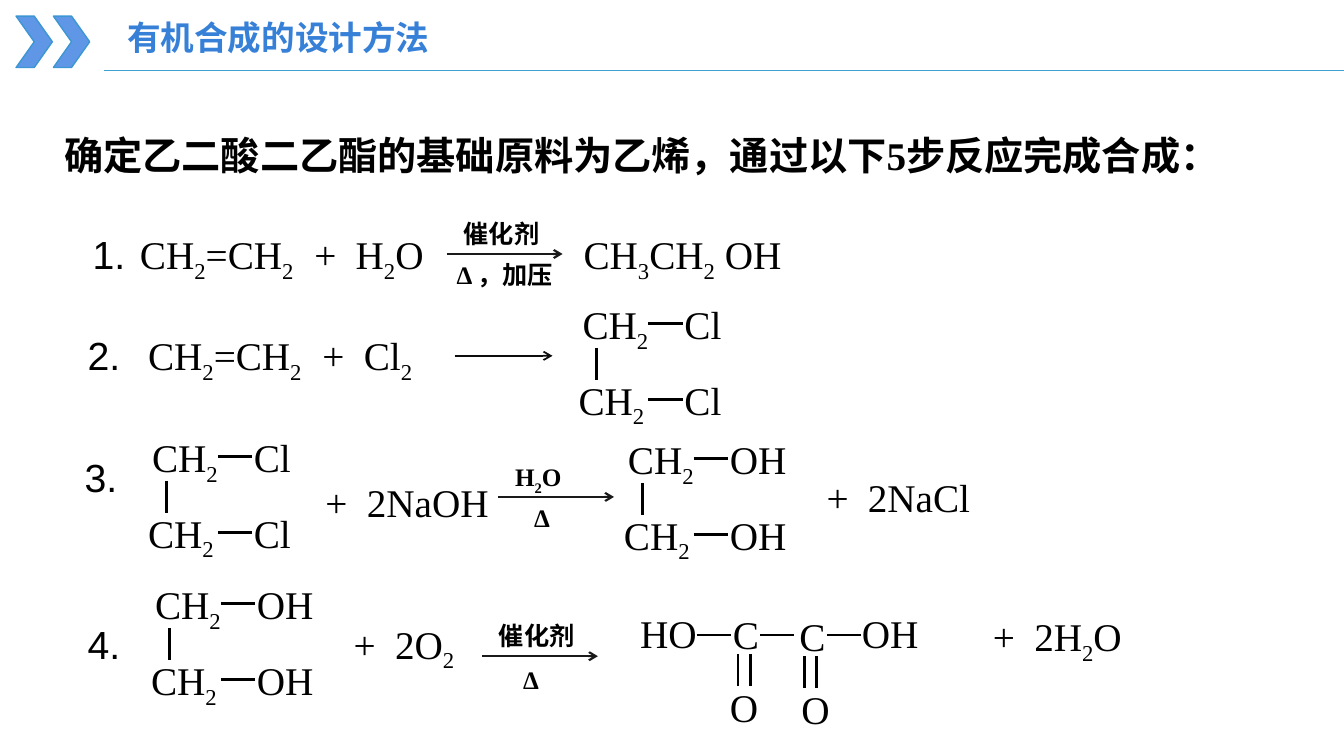
from lxml import etree
from pptx import Presentation
from pptx.dml.color import RGBColor
from pptx.enum.shapes import MSO_CONNECTOR, MSO_SHAPE
from pptx.enum.text import MSO_ANCHOR, MSO_AUTO_SIZE, PP_ALIGN
from pptx.oxml.ns import qn
from pptx.util import Inches, Pt

SERIF = "Times New Roman"
SANS = "Arial"
CHINESE = "Noto Sans CJK SC"


def rgb(value):
    return RGBColor.from_string(value)


def add_run(paragraph, words, font, size, color="000000", bold=False, subscript=False):
    run = paragraph.add_run()
    run.text = words
    run.font.name = font
    run.font.size = Pt(size)
    run.font.bold = bold
    run.font.color.rgb = rgb(color)
    properties = run.font._element
    east_asian = etree.Element(qn("a:ea"), typeface=CHINESE)
    properties.find(qn("a:latin")).addnext(east_asian)
    if subscript:
        properties.set("baseline", "-25000")


def add_formula(paragraph, formula, font, size, bold):
    first, *rest = formula.split("_")
    add_run(paragraph, first, font, size, bold=bold)
    for part in rest:
        add_run(paragraph, part[0], font, size, bold=bold, subscript=True)
        if part[1:]:
            add_run(paragraph, part[1:], font, size, bold=bold)


def add_text(slide, x, y, width, *parts, size=28, bold=False):
    height = 0.57 if size == 28 else 0.4
    box = slide.shapes.add_textbox(Inches(x), Inches(y), Inches(width), Inches(height))
    box.text_frame.word_wrap = True
    for formula, font in parts:
        add_formula(box.text_frame.paragraphs[0], formula, font, size, bold)


def add_symbol(slide, x, y, formula, width=1.0):
    add_text(slide, x, y, width, (formula, SERIF))


def add_number(slide, x, y, number):
    add_text(slide, x, y, 0.67, (f"{number}.", SANS))


def add_plus_term(slide, x, y, formula):
    add_symbol(slide, x, y, "+", 0.5)
    add_symbol(slide, x + 0.41, y, formula, 1.6)


def add_line(slide, start, end, color="000000", weight=2, arrow=False):
    line = slide.shapes.add_connector(
        MSO_CONNECTOR.STRAIGHT, *(Inches(value) for value in (*start, *end)))
    line.line.color.rgb = rgb(color)
    line.line.width = Pt(weight)
    if arrow:
        etree.SubElement(line.line._get_or_add_ln(), qn("a:tailEnd"), type="arrow")
    etree.SubElement(line._element.spPr, qn("a:effectLst"))


def add_bond(slide, x, y):
    add_line(slide, (x, y), (x + 0.34, y))


def add_vertical_bond(slide, x, y):
    add_line(slide, (x, y), (x, y + 0.32))


def add_condition(slide, x, y, *parts):
    add_text(slide, x, y, 1.49, *parts, size=18, bold=True)


def add_reaction_arrow(slide, x, y, above, below, below_x, below_y):
    add_line(slide, (x, y), (x + 1.15, y), "1A1A1A", 1.5, arrow=True)
    add_condition(slide, x + 0.07, y - 0.4, above)
    add_condition(slide, below_x, below_y, *below)


def add_substituted_ethane(slide, x, y, group):
    add_vertical_bond(slide, x + 0.24, y + 0.52)
    for carbon_x, row_y, bond_y in ((x, y, 0.28), (x - 0.04, y + 0.75, 0.28)):
        add_symbol(slide, carbon_x, row_y, "CH_2")
        add_bond(slide, x + 0.75, row_y + bond_y)
        add_symbol(slide, x + 1.01, row_y, group)


def add_carbonyl(slide, x, y, oxygen_x):
    add_symbol(slide, x, y, "C")
    for bond_x in (x + 0.15, x + 0.27):
        add_vertical_bond(slide, bond_x, y + 0.48)
    add_symbol(slide, oxygen_x, y + 0.72, "O")


def add_header(slide):
    for x in (0.16, 0.53):
        chevron = slide.shapes.add_shape(
            MSO_SHAPE.CHEVRON, Inches(x), Inches(0.16), Inches(0.36), Inches(0.51))
        chevron.shadow.inherit = False
        chevron.fill.solid()
        chevron.fill.fore_color.rgb = rgb("6096E6")
        chevron.line.color.rgb = rgb("3B96D3")
        chevron.line.width = Pt(1)
    add_line(slide, (1.03, 0.7), (13.33, 0.7), "3DA1D2", 0.5)

    title = slide.shapes.title
    title.left, title.top = Inches(1.16), Inches(0.12)
    title.width, title.height = Inches(4.19), Inches(0.5)
    frame = title.text_frame
    frame.auto_size = MSO_AUTO_SIZE.NONE
    frame.vertical_anchor = MSO_ANCHOR.TOP
    heading = frame.paragraphs[0]
    heading.alignment = PP_ALIGN.LEFT
    add_run(heading, "有机合成的设计方法", CHINESE, 24, "3780D7", bold=True)


def add_hydration(slide):
    add_number(slide, 0.82, 2.24, 1)
    add_symbol(slide, 1.29, 2.24, "CH_2=CH_2", 2)
    add_plus_term(slide, 3.02, 2.24, "H_2O")
    add_reaction_arrow(slide, 4.43, 2.52, ("催化剂", SANS),
                       [("Δ ", SERIF), ("，加压", SANS)], 4.43, 2.52)
    add_symbol(slide, 5.69, 2.24, "CH_3CH_2 OH", 3.14)


def add_chlorination(slide):
    add_number(slide, 0.77, 3.24, 2)
    add_symbol(slide, 1.37, 3.24, "CH_2=CH_2", 2)
    add_plus_term(slide, 3.1, 3.24, "Cl_2")
    add_line(slide, (4.51, 3.53), (5.48, 3.53), "0D0D0D", 1.25, arrow=True)
    add_substituted_ethane(slide, 5.68, 2.93, "Cl")


def add_hydrolysis(slide):
    add_number(slide, 0.74, 4.45, 3)
    add_substituted_ethane(slide, 1.41, 4.25, "Cl")
    add_plus_term(slide, 3.13, 4.7, "2NaOH")
    add_reaction_arrow(slide, 4.94, 4.93, ("H_2O", SERIF), [("Δ", SERIF)], 5.2, 4.93)
    add_substituted_ethane(slide, 6.13, 4.27, "OH")
    add_plus_term(slide, 8.1, 4.65, "2NaCl")


def add_oxidation(slide):
    add_number(slide, 0.77, 6.1, 4)
    add_substituted_ethane(slide, 1.44, 5.71, "OH")
    add_plus_term(slide, 3.41, 6.1, "2O_2")
    add_reaction_arrow(slide, 4.78, 6.51, ("催化剂", SANS), [("Δ", SERIF)], 5.09, 6.54)
    add_symbol(slide, 6.25, 6, "HO")
    add_carbonyl(slide, 7.17, 6.01, 7.14)
    add_carbonyl(slide, 7.83, 6.03, 7.85)
    add_symbol(slide, 8.45, 6, "OH")
    for x in (6.91, 7.54, 8.2):
        add_bond(slide, x, 6.3)
    add_plus_term(slide, 9.75, 6.03, "2H_2O")


def main():
    presentation = Presentation()
    presentation.slide_width = Inches(13.33)
    presentation.slide_height = Inches(7.5)
    slide = presentation.slides.add_slide(presentation.slide_layouts[5])
    add_header(slide)
    add_text(slide, 0.54, 1.25, 11.8,
             ("确定乙二酸二乙酯的基础原料为乙烯，通过以下5步反应完成合成：", SERIF), bold=True)
    add_hydration(slide)
    add_chlorination(slide)
    add_hydrolysis(slide)
    add_oxidation(slide)
    presentation.save("out.pptx")


if __name__ == "__main__":
    main()
